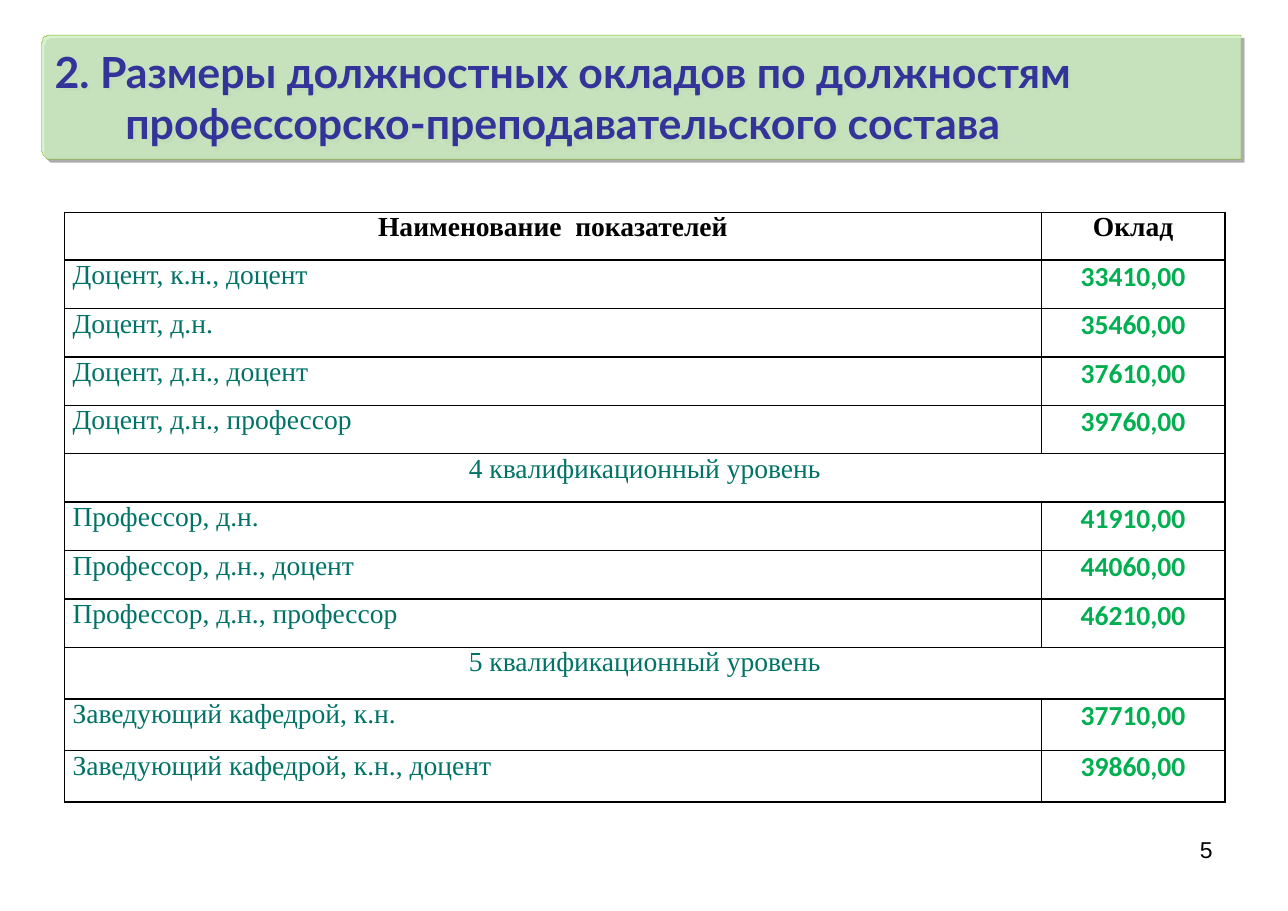
from math import cos, pi, sin

from lxml.etree import SubElement
from pptx import Presentation
from pptx.dml.color import RGBColor
from pptx.enum.text import MSO_ANCHOR, PP_ALIGN
from pptx.oxml.ns import qn
from pptx.util import Pt

TITLE = "2. Размеры должностных окладов по должностям профессорско-преподавательского состава"
HEADER = ("Наименование  показателей", "Оклад")
# A row with one item is a heading across both columns
ROWS = [
    ("Доцент, к.н., доцент", "33410,00"),
    ("Доцент, д.н.", "35460,00"),
    ("Доцент, д.н., доцент", "37610,00"),
    ("Доцент, д.н., профессор", "39760,00"),
    ("4 квалификационный уровень",),
    ("Профессор, д.н.", "41910,00"),
    ("Профессор, д.н., доцент", "44060,00"),
    ("Профессор, д.н., профессор", "46210,00"),
    ("5 квалификационный уровень",),
    ("Заведующий кафедрой, к.н.", "37710,00"),
    ("Заведующий кафедрой, к.н., доцент", "39860,00"),
]
PAGE = "5"

SLIDE_W, SLIDE_H = 841.68, 595.44
BANNER = (27.4, 22.9, 784, 81)
RADIUS = 5
TABLE_X, TABLE_Y = 42.2, 138.8
COL_WIDTHS = (638.3, 120)
ROW_HEIGHTS = [31.2] + [31.65] * 8 + [33.75] * 3
HEADER_STYLE = ("Times New Roman", "000000", True, PP_ALIGN.CENTER)
NAME_STYLE = ("Times New Roman", "007366", False, PP_ALIGN.JUSTIFY)
LEVEL_STYLE = ("Times New Roman", "007366", False, PP_ALIGN.CENTER)
SALARY_STYLE = ("Calibri", "00B050", True, PP_ALIGN.CENTER)


def rgb(color):
    return RGBColor.from_string(color)


def set_text(tf, text, font, color, bold, align, size=18):
    tf.text = text
    p = tf.paragraphs[0]
    p.alignment = align
    f = p.runs[0].font
    f.name, f.size, f.bold = font, Pt(size), bold
    f.color.rgb = rgb(color)


def set_margins(box, left, top, right, bottom):
    box.margin_left, box.margin_top = Pt(left), Pt(top)
    box.margin_right, box.margin_bottom = Pt(right), Pt(bottom)


def add_alpha(color_element, percent):
    SubElement(color_element, qn("a:alpha"), val=str(percent * 1000))


def add_banner(slide):
    """Title bar with rounded left corners and a hard shadow."""
    x, y, w, h = BANNER
    corners = [(y + h - RADIUS, pi / 2), (y + RADIUS, pi)]
    points = [(x + w, y), (x + w, y + h)]
    for cy, start in corners:
        for step in range(7):
            a = start + step * pi / 12
            points.append((x + RADIUS + RADIUS * cos(a), cy + RADIUS * sin(a)))
    builder = slide.shapes.build_freeform(*points[0], scale=Pt(1))
    builder.add_line_segments(points[1:], close=True)
    sp = builder.convert_to_shape()
    sp.fill.solid()
    sp.fill.fore_color.rgb = rgb("CDF0C2")
    sp.line.color.rgb = rgb("78B012")
    sp.line.width = Pt(0.25)
    sp.shadow.inherit = False
    spPr = sp.element.spPr
    add_alpha(spPr.find(qn("a:solidFill"))[0], 80)
    shadow = SubElement(spPr.find(qn("a:effectLst")), qn("a:outerShdw"), blurRad="0",
                        dist=str(Pt(3)), dir="2700000", algn="tl", rotWithShape="0")
    add_alpha(SubElement(shadow, qn("a:srgbClr"), val="000000"), 40)
    tf = sp.text_frame
    tf.word_wrap = True
    tf.vertical_anchor = MSO_ANCHOR.MIDDLE
    set_margins(tf, 1.3, 0, 104, 0)
    set_text(tf, TITLE, "Lato", "333399", True, PP_ALIGN.CENTER, 28)


def add_borders(cell):
    tcPr = cell._tc.get_or_add_tcPr()
    for index, side in enumerate(("lnL", "lnR", "lnT", "lnB")):
        ln = tcPr.makeelement(qn(f"a:{side}"), {"w": str(Pt(1))})
        SubElement(SubElement(ln, qn("a:solidFill")), qn("a:srgbClr"), val="000000")
        tcPr.insert(index, ln)


def add_salary_table(slide):
    rows = [HEADER] + ROWS
    table = slide.shapes.add_table(len(rows), 2, Pt(TABLE_X), Pt(TABLE_Y),
                                   Pt(sum(COL_WIDTHS)), Pt(sum(ROW_HEIGHTS))).table
    table.first_row = table.horz_banding = False
    for column, width in zip(table.columns, COL_WIDTHS):
        column.width = Pt(width)
    for i, texts in enumerate(rows):
        table.rows[i].height = Pt(ROW_HEIGHTS[i])
        for j in range(2):
            cell = table.cell(i, j)
            cell.fill.background()
            set_margins(cell, 5.2, 0, 5.2, 0)
            add_borders(cell)
        if i == 0:
            styles = (HEADER_STYLE, HEADER_STYLE)
        elif len(texts) == 1:
            styles = (LEVEL_STYLE,)
            table.cell(i, 0).merge(table.cell(i, 1))
        else:
            styles = (NAME_STYLE, SALARY_STYLE)
        for j, (text, style) in enumerate(zip(texts, styles)):
            set_text(table.cell(i, j).text_frame, text, *style)


def add_page_number(slide):
    tf = slide.shapes.add_textbox(Pt(603), Pt(542.7), Pt(196.5), Pt(41)).text_frame
    tf.word_wrap = True
    set_text(tf, PAGE, "Arial", "000000", False, PP_ALIGN.RIGHT, 15)


def main():
    prs = Presentation()
    prs.slide_width, prs.slide_height = Pt(SLIDE_W), Pt(SLIDE_H)
    s = prs.slides.add_slide(prs.slide_layouts[6])
    add_page_number(s)
    add_banner(s)
    add_salary_table(s)
    prs.save("out.pptx")


if __name__ == "__main__":
    main()
